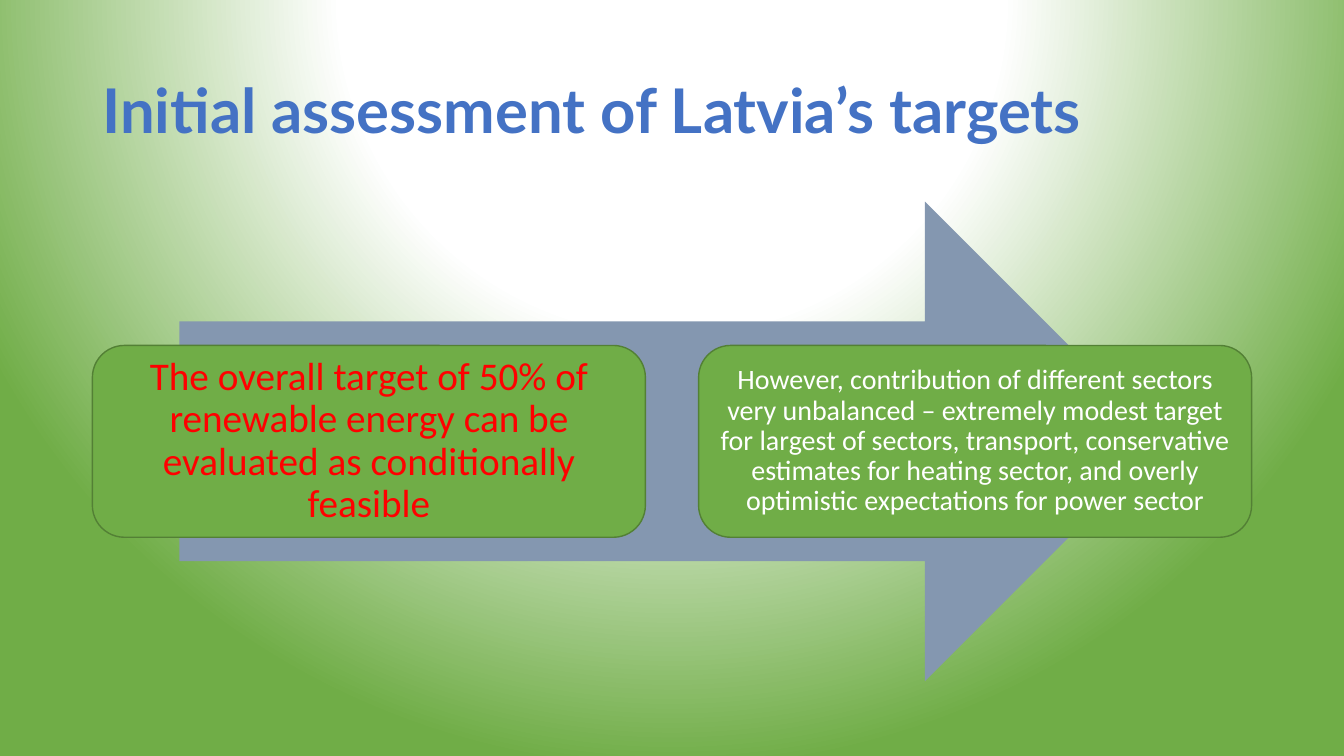
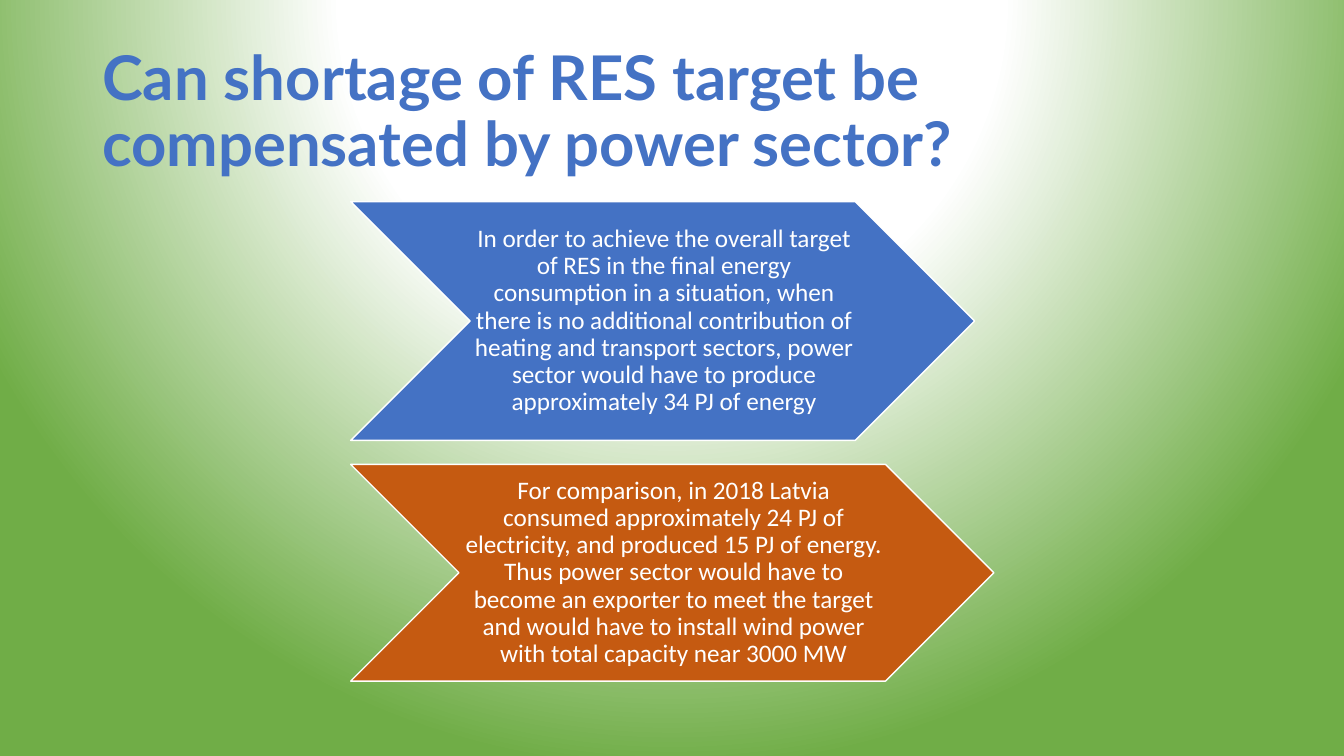
import pptx
import pptx.util
import pptx.dml.color
import pptx.enum.shapes
import pptx.enum.text
import pptx.oxml
import pptx.oxml.ns

Pt = pptx.util.Pt
RGBColor = pptx.dml.color.RGBColor
SHAPE = pptx.enum.shapes.MSO_SHAPE
ALIGN = pptx.enum.text.PP_ALIGN
MIDDLE = pptx.enum.text.MSO_ANCHOR.MIDDLE

BLUE = RGBColor(0x44, 0x72, 0xC4)
GREEN = RGBColor(0x70, 0xAD, 0x47)
DARK_GREEN = RGBColor(0x53, 0x80, 0x35)
SLATE = RGBColor(0x84, 0x97, 0xB0)
ORANGE = RGBColor(0xC5, 0x5A, 0x11)
RED = RGBColor(0xFF, 0x00, 0x00)
WHITE = RGBColor(0xFF, 0xFF, 0xFF)

LEFT = 66
WIDTH = 828
TOP = 144
BOTTOM = 486.5

BACKGROUND = f"""<p:bg {pptx.oxml.ns.nsdecls("p", "a")}><p:bgPr>
<a:gradFill rotWithShape="1"><a:gsLst>
<a:gs pos="0"><a:srgbClr val="{WHITE}"/></a:gs>
<a:gs pos="43000"><a:srgbClr val="{WHITE}"/></a:gs>
<a:gs pos="100000"><a:srgbClr val="{GREEN}"/></a:gs>
</a:gsLst><a:path path="circle">
<a:fillToRect l="50000" t="-80000" r="50000" b="180000"/>
</a:path></a:gradFill><a:effectLst/></p:bgPr></p:bg>"""


def write(holder, text, align, insets, style):
    frame = holder.text_frame
    sides = ("margin_left", "margin_top", "margin_right", "margin_bottom")
    settings = {"word_wrap": True, "vertical_anchor": MIDDLE}
    settings.update(zip(sides, map(Pt, insets)))
    for name, value in settings.items():
        setattr(frame, name, value)
    para = frame.paragraphs[0]
    para.alignment = align
    para.line_spacing = 0.9
    span = para.add_run()
    span.text = text
    span.font.color.rgb = style["color"]
    for name in ("name", "size", "bold"):
        setattr(span.font, name, style.get(name))


def add_block(page, kind, place, fill, outline=None):
    block = page.shapes.add_shape(kind, *map(Pt, place))
    block.shadow.inherit = False
    block.fill.solid()
    block.fill.fore_color.rgb = fill
    if outline is None:
        block.line.fill.background()
    else:
        block.line.color.rgb = outline
        block.line.width = Pt(1)
    return block


deck = pptx.Presentation()
deck.slide_width = Pt(960)
deck.slide_height = Pt(540)

canvas = deck.slide_master.element.cSld
for old in canvas.findall(pptx.oxml.ns.qn("p:bg")):
    canvas.remove(old)
canvas.insert(0, pptx.oxml.parse_xml(BACKGROUND))

title_style = {"name": "Lato", "size": Pt(44), "bold": True, "color": BLUE}
pages = []
for title in (
    "Initial assessment of Latvia’s targets",
    "Can shortage of RES target be compensated by power sector?",
):
    page = deck.slides.add_slide(deck.slide_layouts[6])
    box = page.shapes.add_textbox(Pt(LEFT), Pt(28.75), Pt(WIDTH), Pt(104.4))
    write(box, title, ALIGN.LEFT, (7.2, 3.6, 7.2, 3.6), title_style)
    pages.append(page)

targets, shortage = pages

arrow_width = WIDTH * 0.85
arrow_left = LEFT + (WIDTH - arrow_width) / 2
arrow_height = BOTTOM - TOP
add_block(targets, SHAPE.RIGHT_ARROW, (arrow_left, TOP, arrow_width, arrow_height), SLATE)

card_width = 395
card_height = arrow_height * 0.4
card_top = TOP + (arrow_height - card_height) / 2
cards = (
    ("The overall target of 50% of renewable energy can be evaluated as "
     "conditionally feasible", 28, RED),
    ("However, contribution of different sectors very unbalanced – extremely "
     "modest target for largest of sectors, transport, conservative estimates "
     "for heating sector, and overly optimistic expectations for power sector",
     20, WHITE),
)
for index, (text, size, color) in enumerate(cards):
    left = LEFT + index * (WIDTH - card_width)
    place = (left, card_top, card_width, card_height)
    card = add_block(targets, SHAPE.ROUNDED_RECTANGLE, place, GREEN, DARK_GREEN)
    style = {"name": "Calibri", "size": Pt(size), "color": color}
    write(card, text, ALIGN.CENTER, [size * 0.3] * 4, style)

chevron_style = {"name": "Calibri", "size": Pt(18), "color": WHITE}
chevrons = (
    ("In order to achieve the overall target of RES in the final energy "
     "consumption in a situation, when there is no additional contribution of "
     "heating and transport sectors, power sector would have to produce "
     "approximately 34 PJ of energy", 445.7, 170.6, BLUE),
    ("For comparison, in 2018 Latvia consumed approximately 24 PJ of "
     "electricity, and produced 15 PJ of energy. Thus power sector would have "
     "to become an exporter to meet the target and would have to install wind "
     "power with total capacity near 3000 MW", 459.5, 154.8, ORANGE),
)
gap = arrow_height - sum(height for _, _, height, _ in chevrons)
top = TOP
for text, width, height, fill in chevrons:
    place = (250.5, top, width, height)
    chevron = add_block(shortage, SHAPE.CHEVRON, place, fill, WHITE)
    write(chevron, text, ALIGN.CENTER, (2, 0.7, 0, 0.7), chevron_style)
    top += height + gap

deck.save("out.pptx")
